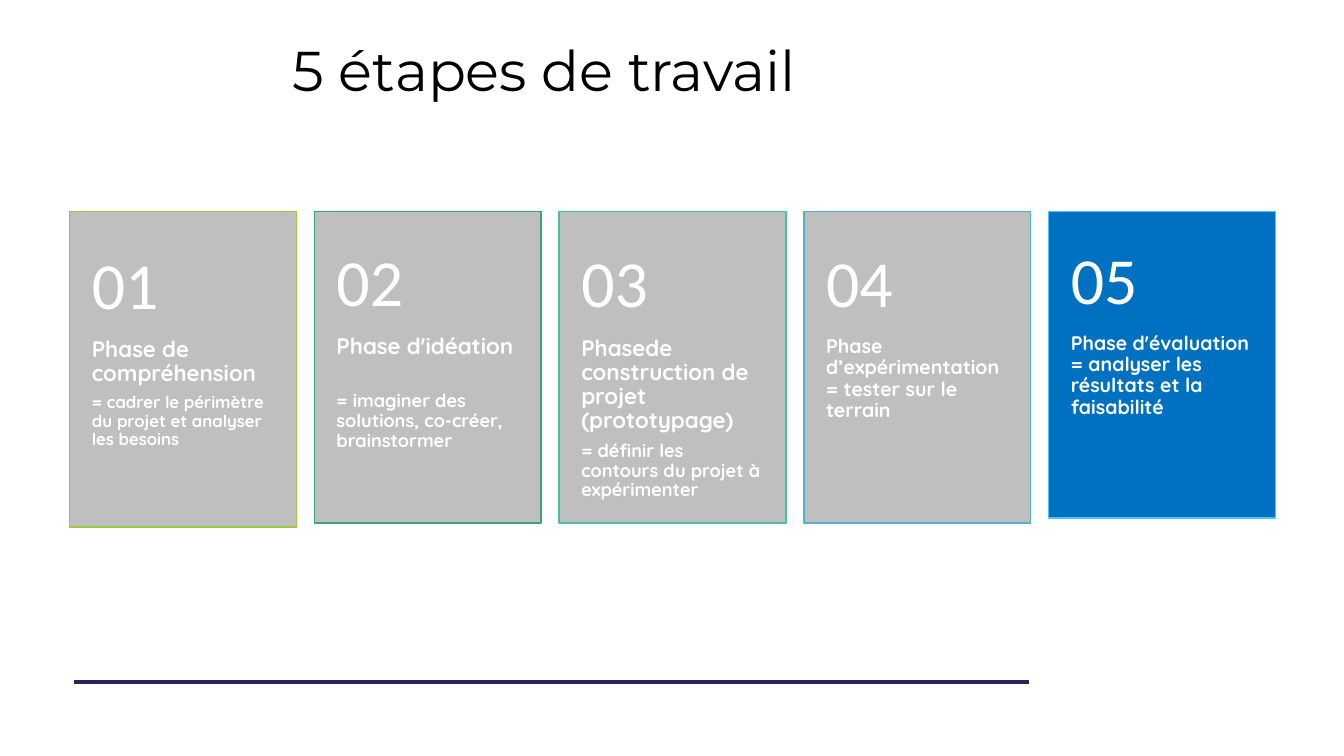
from pptx import Presentation
from pptx.dml.color import RGBColor
from pptx.enum.shapes import MSO_CONNECTOR, MSO_SHAPE
from pptx.enum.text import MSO_ANCHOR
from pptx.oxml.ns import qn
from pptx.util import Inches, Pt
from lxml import etree

STRAIGHT = MSO_CONNECTOR.STRAIGHT
RECTANGLE = MSO_SHAPE.RECTANGLE
TOP, MIDDLE = MSO_ANCHOR.TOP, MSO_ANCHOR.MIDDLE

FIRST_LEFT, LAST_LEFT = 0.69, 10.4
CARD_TOP, CARD_WIDTH = 2.1, 2.25
GREY, BLUE, WHITE = "BFBFBF", "0070C0", "FFFFFF"

# Height, fill, outline, number top, text top, then (text, size, space after)
CARDS = [
    (3.13, GREY, "99CB38", 2.32, 3.35,
     [("Phase de compréhension", 16, 6),
      ("= cadrer le périmètre du projet et analyser les besoins", 12, 0)]),
    (3.09, GREY, "37A76F", 2.29, 3.33,
     [("Phase d'idéation", 16, 23),
      ("= imaginer des solutions, co-créer, brainstormer", 13, 0)]),
    (3.09, GREY, "44C1A3", 2.3, 3.34,
     [("Phasede construction de projet (prototypage)", 16, 6),
      ("= définir les contours du projet à expérimenter", 13, 0)]),
    (3.09, GREY, "4EB3CF", 2.3, 3.34,
     [("Phase d’expérimentation = tester sur le terrain", 14, 0)]),
    (3.04, BLUE, "51C3F9", 2.27, 3.31,
     [("Phase d'évaluation = analyser les résultats et la faisabilité", 14, 0)]),
]


def color(value):
    return RGBColor.from_string(value)


def add_text(place, insets, anchor, paragraphs, font_name, text_color, bold=False):
    box = page.shapes.add_textbox(*[Inches(length) for length in place])
    frame = box.text_frame
    frame.word_wrap = True
    frame.vertical_anchor = anchor
    (frame.margin_left, frame.margin_top,
     frame.margin_right, frame.margin_bottom) = [Inches(inset) for inset in insets]
    for index, (text, size, space_after) in enumerate(paragraphs):
        para = frame.add_paragraph() if index else frame.paragraphs[0]
        para.text = text
        para.line_spacing = 0.9
        para.space_after = Pt(space_after)
        para.font.name = font_name
        para.font.size = Pt(size)
        para.font.bold = bold
        para.font.color.rgb = color(text_color)


deck = Presentation()
deck.slide_width, deck.slide_height = Inches(13.33), Inches(7.5)
page = deck.slides.add_slide(deck.slide_layouts[6])

# Footer rule
rule = page.shapes.add_connector(
    STRAIGHT, Inches(0.73), Inches(6.77), Inches(10.21), Inches(6.77))
rule.line.color.rgb = color("29245C")
rule.line.width = Pt(3)
etree.SubElement(rule._element.spPr, qn("a:effectLst"))

# Title
add_text((2.8, 0, 10.5, 1.45), (0.1, 0.05, 0.1, 0.05), MIDDLE,
         [("5 étapes de travail", 40, 0)], "Montserrat", "000000")

# Phase cards
pitch = (LAST_LEFT - FIRST_LEFT) / (len(CARDS) - 1)
for index, (height, fill, outline, number_top, text_top, paragraphs) in enumerate(CARDS):
    left = FIRST_LEFT + index * pitch
    card = page.shapes.add_shape(
        RECTANGLE, Inches(left), Inches(CARD_TOP), Inches(CARD_WIDTH), Inches(height))
    card.shadow.inherit = False
    card.fill.solid()
    card.fill.fore_color.rgb = color(fill)
    card.line.color.rgb = color(outline)
    card.line.width = Pt(1)
    add_text((left, text_top, CARD_WIDTH, CARD_TOP + height - text_top),
             (0.22, 0, 0.22, 0.36), TOP, paragraphs, "Quicksand", WHITE, True)
    add_text((left, number_top, CARD_WIDTH, 1.08), (0.22, 0.18, 0.22, 0.18), MIDDLE,
             [(f"{index + 1:02}", 47, 0)], "Calibri", WHITE)

deck.save("out.pptx")
